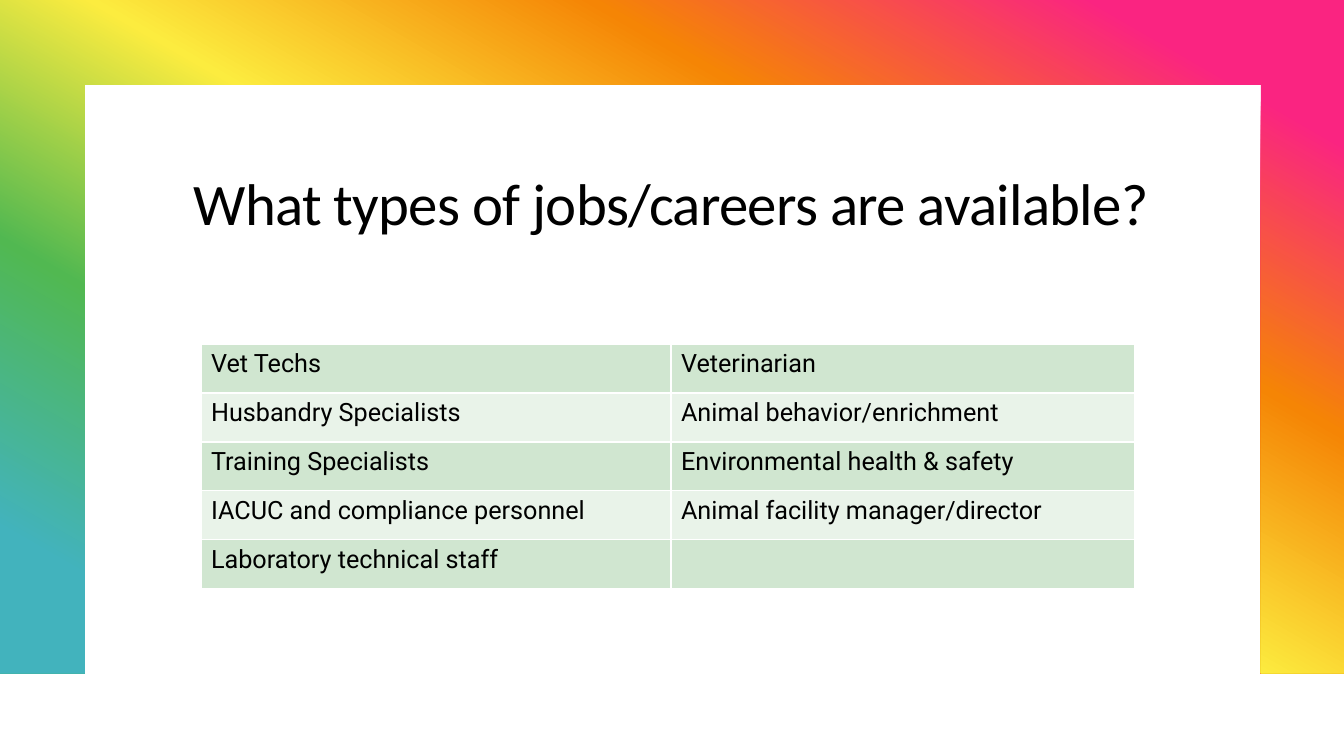
import lxml.etree
import pptx
import pptx.dml.color
import pptx.enum.text
import pptx.oxml.ns
import pptx.util

SCALE = 914400 / 100.8
COLOURS = {
    "pink": "FA2481", "orange": "F58505", "yellow": "FCEC3F",
    "green": "51B851", "teal": "42B3BD",
    "black": "000000", "white": "FFFFFF",
    "dark band": "D0E6D0", "light band": "E9F3E9",
}
RAINBOW = ["pink", "orange", "yellow", "green", "teal"]
FRAME = [(0, 0), (1344, 0), (1344, 673), (1261, 673),
         (1261, 85), (85, 85), (85, 673), (0, 673)]
JOBS = [
    ("Vet Techs", "Veterinarian"),
    ("Husbandry Specialists", "Animal behavior/enrichment"),
    ("Training Specialists", "Environmental health & safety"),
    ("IACUC and compliance personnel", "Animal facility manager/director"),
    ("Laboratory technical staff", ""),
]


def px(length):
    return pptx.util.Emu(round(length * SCALE))


def colour(name):
    return pptx.dml.color.RGBColor.from_string(COLOURS[name])


def add_element(parent, tag, **attributes):
    return lxml.etree.SubElement(parent, pptx.oxml.ns.qn(tag), attributes)


class SlideBuilder:
    title_format = {"name": "Calibri", "size": pptx.util.Pt(42)}
    table_format = {"name": "Roboto", "size": pptx.util.Pt(18)}

    def __init__(self, deck):
        self.page = deck.slides.add_slide(deck.slide_layouts[6])

    def add_span(self, para, text, formats):
        span = para.add_run()
        span.text = text
        for name, value in formats.items():
            setattr(span.font, name, value)
        span.font.color.rgb = colour("black")
        return span

    def gradient_frame(self, corners, stops, angle):
        builder = self.page.shapes.build_freeform(*corners[0], scale=SCALE)
        builder.add_line_segments(corners[1:], close=True)
        frame = builder.convert_to_shape()
        frame.shadow.inherit = False
        frame.line.fill.background()
        frame.fill.gradient()
        frame.fill.gradient_angle = 360 - angle
        stop_list = frame.element.spPr.find(".//" + pptx.oxml.ns.qn("a:gsLst"))
        for stop in list(stop_list):
            stop_list.remove(stop)
        for index, name in enumerate(stops):
            stop = add_element(stop_list, "a:gs", pos=str(10000 + 20000 * index))
            add_element(stop, "a:srgbClr", val=COLOURS[name])

    def title(self, text, left, top, width, height):
        box = self.page.shapes.add_textbox(px(left), px(top), px(width), px(height))
        box.text_frame.word_wrap = True
        para = box.text_frame.paragraphs[0]
        para.alignment = pptx.enum.text.PP_ALIGN.CENTER
        para.line_spacing = 0.95
        span = self.add_span(para, text, self.title_format)
        span._r.get_or_add_rPr().set("spc", "-50")

    def border(self, cell):
        properties = cell._tc.get_or_add_tcPr()
        for side in ("L", "R", "T", "B"):
            line = add_element(properties, "a:ln" + side, w="12700")
            fill = add_element(line, "a:solidFill")
            add_element(fill, "a:srgbClr", val=COLOURS["white"])

    def table(self, rows, left, top, widths, row_height):
        table = self.page.shapes.add_table(
            len(rows), len(widths), px(left), px(top),
            px(sum(widths)), px(row_height * len(rows))).table
        for column, width in zip(table.columns, widths):
            column.width = px(width)
        for index, texts in enumerate(rows):
            table.rows[index].height = px(row_height)
            for cell, text in zip(table.rows[index].cells, texts):
                self.border(cell)
                cell.fill.solid()
                cell.fill.fore_color.rgb = colour(
                    "light band" if index % 2 else "dark band")
                if text:
                    self.add_span(cell.text_frame.paragraphs[0], text, self.table_format)


def main():
    deck = pptx.Presentation()
    deck.slide_width, deck.slide_height = px(1344), px(756)
    slide = SlideBuilder(deck)
    slide.gradient_frame(FRAME, RAINBOW, 120)
    slide.title("What types of jobs/careers are available?", 167, 167, 1008, 148)
    slide.table(JOBS, 201, 344, [470, 464], 49)
    deck.save("out.pptx")


if __name__ == "__main__":
    main()
